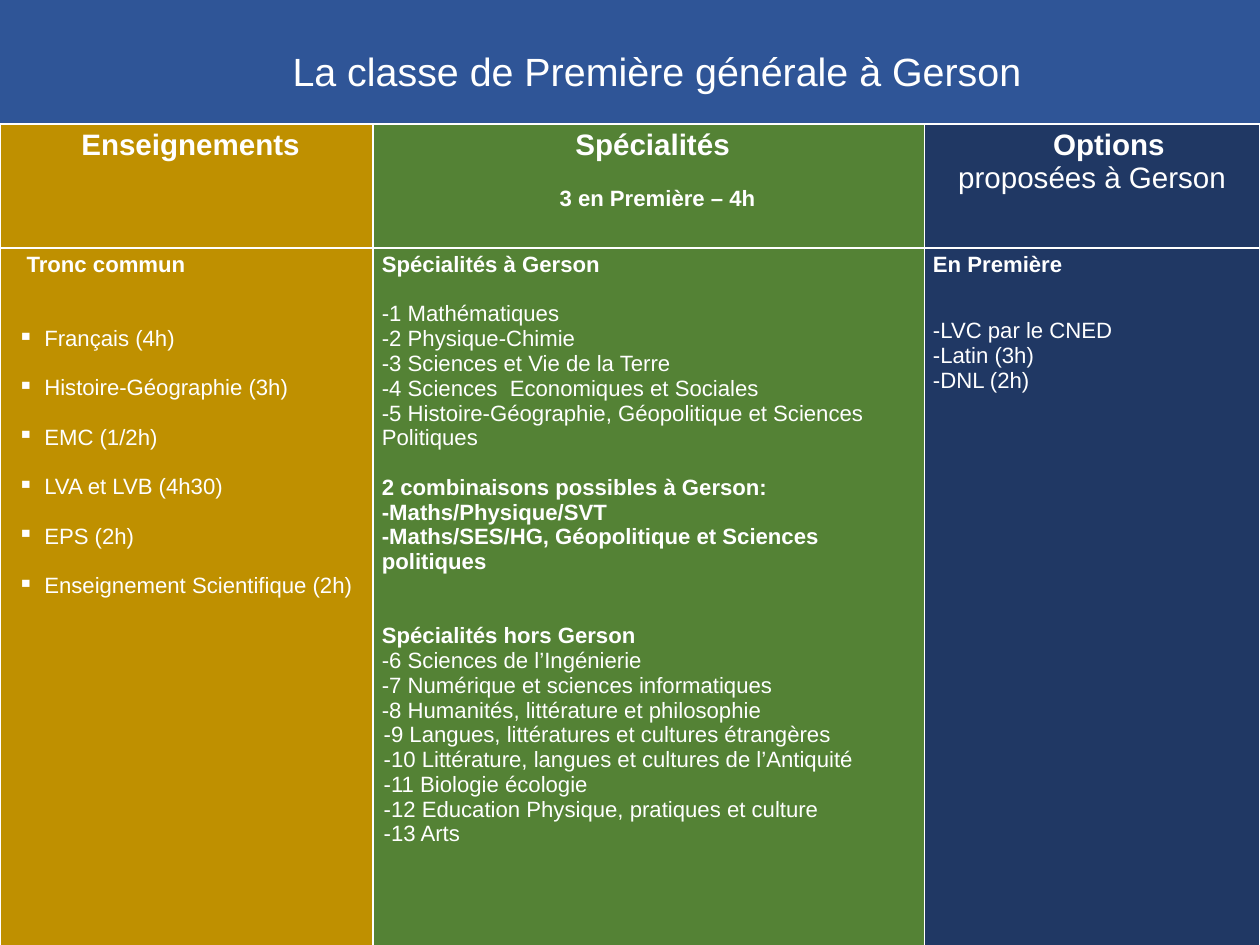
from lxml.etree import SubElement
from pptx import Presentation
from pptx.dml.color import RGBColor
from pptx.enum.text import MSO_ANCHOR, PP_ALIGN
from pptx.oxml import parse_xml
from pptx.oxml.ns import nsdecls, qn
from pptx.util import Inches, Pt

GOLD, GREEN, NAVY = "BF9000", "548235", "203864"
BLUE, WHITE = "2F5597", "FFFFFF"
LINE = 20

HEADS = [
    [("Enseignements", dict(left=0.09))],
    [("Spécialités", dict(left=0.09)),
     ("3 en Première – 4h", dict(left=0.2, size=18, before=LINE))],
    [("Options", dict(left=0.38)),
     ("proposées à Gerson", dict(bold=False))],
]
CORE = ["Français (4h)", "Histoire-Géographie (3h)", "EMC (1/2h)",
        "LVA et LVB (4h30)", "EPS (2h)", "Enseignement Scientifique (2h)"]
LOCAL = ["-1 Mathématiques", "-2 Physique-Chimie",
         "-3 Sciences et Vie de la Terre",
         "-4 Sciences  Economiques et Sociales",
         "-5 Histoire-Géographie, Géopolitique et Sciences Politiques"]
PAIRS = ["-Maths/Physique/SVT",
         "-Maths/SES/HG, Géopolitique et Sciences politiques"]
AWAY = ["-6 Sciences de l’Ingénierie",
        "-7 Numérique et sciences informatiques",
        "-8 Humanités, littérature et philosophie"]
REST = ["-9 Langues, littératures et cultures étrangères",
        "-10 Littérature, langues et cultures de l’Antiquité",
        "-11 Biologie écologie",
        "-12 Education Physique, pratiques et culture", "-13 Arts"]
OPTIONS = ["-LVC par le CNED", "-Latin (3h)", "-DNL (2h)"]


def color(code):
    return RGBColor.from_string(code)


def write(frame, text, size=18, bold=False, align=PP_ALIGN.LEFT,
          left=0, hang=0, before=0, bullet=None):
    para = frame.paragraphs[0]
    if para.runs:
        para = frame.add_paragraph()
    para.alignment = align
    para.space_before = Pt(before)
    run = para.add_run()
    run.text = text
    font = run.font
    font.name, font.size, font.bold = "Arial", Pt(size), bold
    font.color.rgb = color(WHITE)
    props = para._p.get_or_add_pPr()
    props.set("marL", str(Inches(left)))
    props.set("indent", str(Inches(-hang)))
    if bullet:
        SubElement(props, qn("a:buChar")).set("char", bullet)


def items(texts, first=0, **style):
    return [(text, dict(style, before=0 if i else first))
            for i, text in enumerate(texts)]


def bodies():
    core = [("Tronc commun", dict(bold=True, left=0.2))]
    for i, text in enumerate(CORE):
        core.append((text, dict(left=0.4, hang=0.3, bullet="▪",
                                before=LINE if i else 2 * LINE)))
    major = [("Spécialités à Gerson", dict(bold=True))]
    major += items(LOCAL, first=LINE)
    major += items(["2 combinaisons possibles à Gerson:"] + PAIRS,
                   first=LINE, bold=True)
    major += items(["Spécialités hors Gerson"], first=2 * LINE, bold=True)
    major += items(AWAY) + items(REST, left=0.02)
    extra = [("En Première", dict(bold=True))]
    extra += items(OPTIONS, first=33.5)
    return [core, major, extra]


def border(cell):
    props = cell._tc.get_or_add_tcPr()
    for i, side in enumerate("LRTB"):
        props.insert(i, parse_xml(
            f'<a:ln{side} {nsdecls("a")} w="{Pt(1)}"><a:solidFill>'
            f'<a:srgbClr val="{WHITE}"/></a:solidFill></a:ln{side}>'))


def fill_cell(cell, lines, shade, **base):
    cell.fill.solid()
    cell.fill.fore_color.rgb = color(shade)
    border(cell)
    for text, style in lines:
        write(cell.text_frame, text, **{**base, **style})


def add_grid(slide):
    widths, heights = [4.21, 6.22, 3.79], [1.4, 8.4]
    grid = slide.shapes.add_table(
        2, 3, 0, Inches(1.4), Inches(sum(widths)), Inches(sum(heights))).table
    for row, height in zip(grid.rows, heights):
        row.height = Inches(height)
    columns = zip(widths, [GOLD, GREEN, NAVY], HEADS, bodies())
    for i, (width, shade, head, body) in enumerate(columns):
        grid.columns[i].width = Inches(width)
        fill_cell(grid.cell(0, i), head, shade,
                  size=24, bold=True, align=PP_ALIGN.CENTER)
        fill_cell(grid.cell(1, i), body, shade)


def add_title(slide):
    box = slide.shapes.add_textbox(
        Inches(0.49), Inches(0.34), Inches(13.38), Inches(0.77))
    frame = box.text_frame
    frame.word_wrap = True
    frame.vertical_anchor = MSO_ANCHOR.BOTTOM
    write(frame, "La classe de Première générale à Gerson",
          size=32, align=PP_ALIGN.CENTER, left=0.48)


def main():
    deck = Presentation()
    deck.slide_width, deck.slide_height = Inches(14.22), Inches(10.67)
    slide = deck.slides.add_slide(deck.slide_layouts[6])
    back = slide.background.fill
    back.solid()
    back.fore_color.rgb = color(BLUE)
    add_grid(slide)
    add_title(slide)
    deck.save("out.pptx")


if __name__ == "__main__":
    main()
